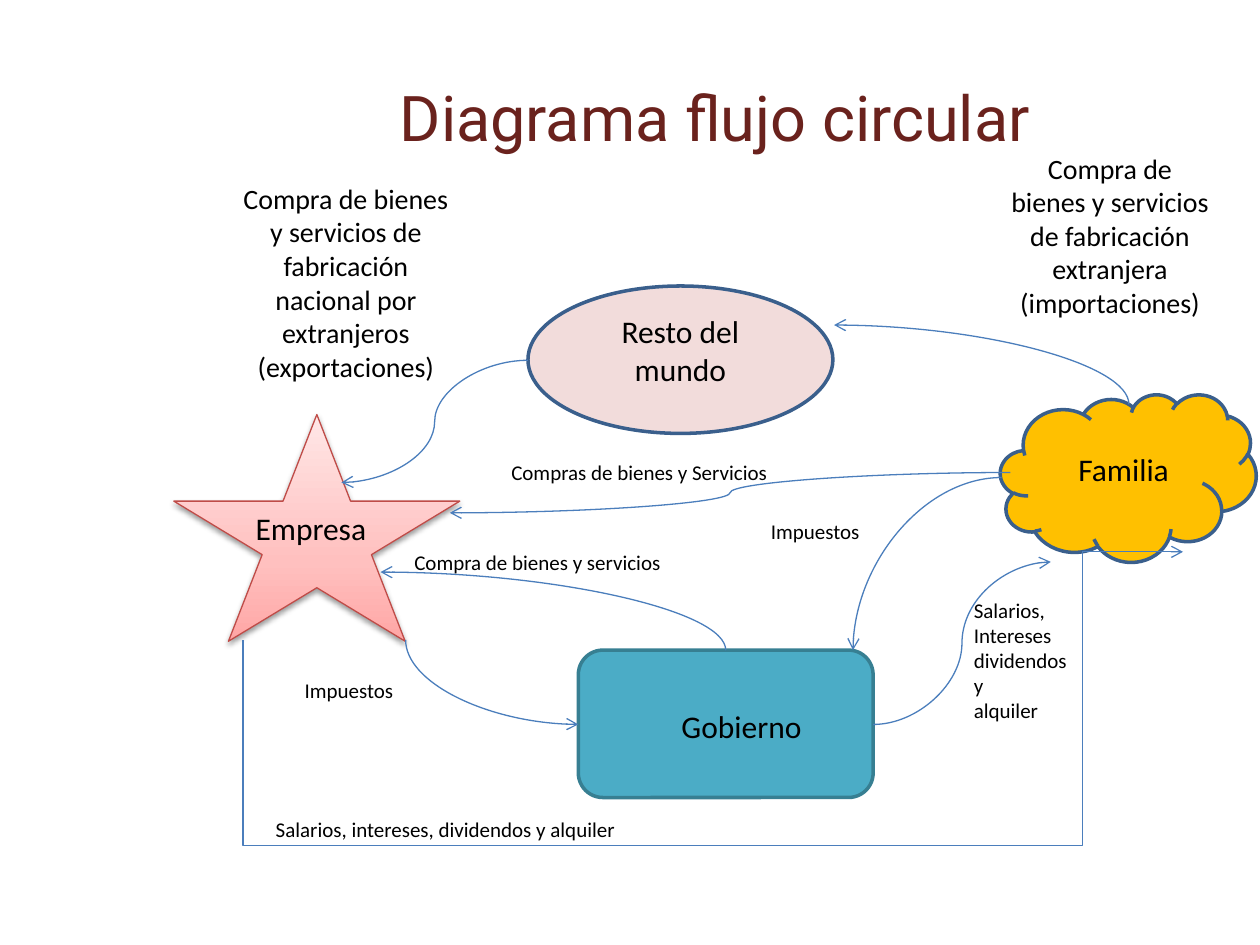
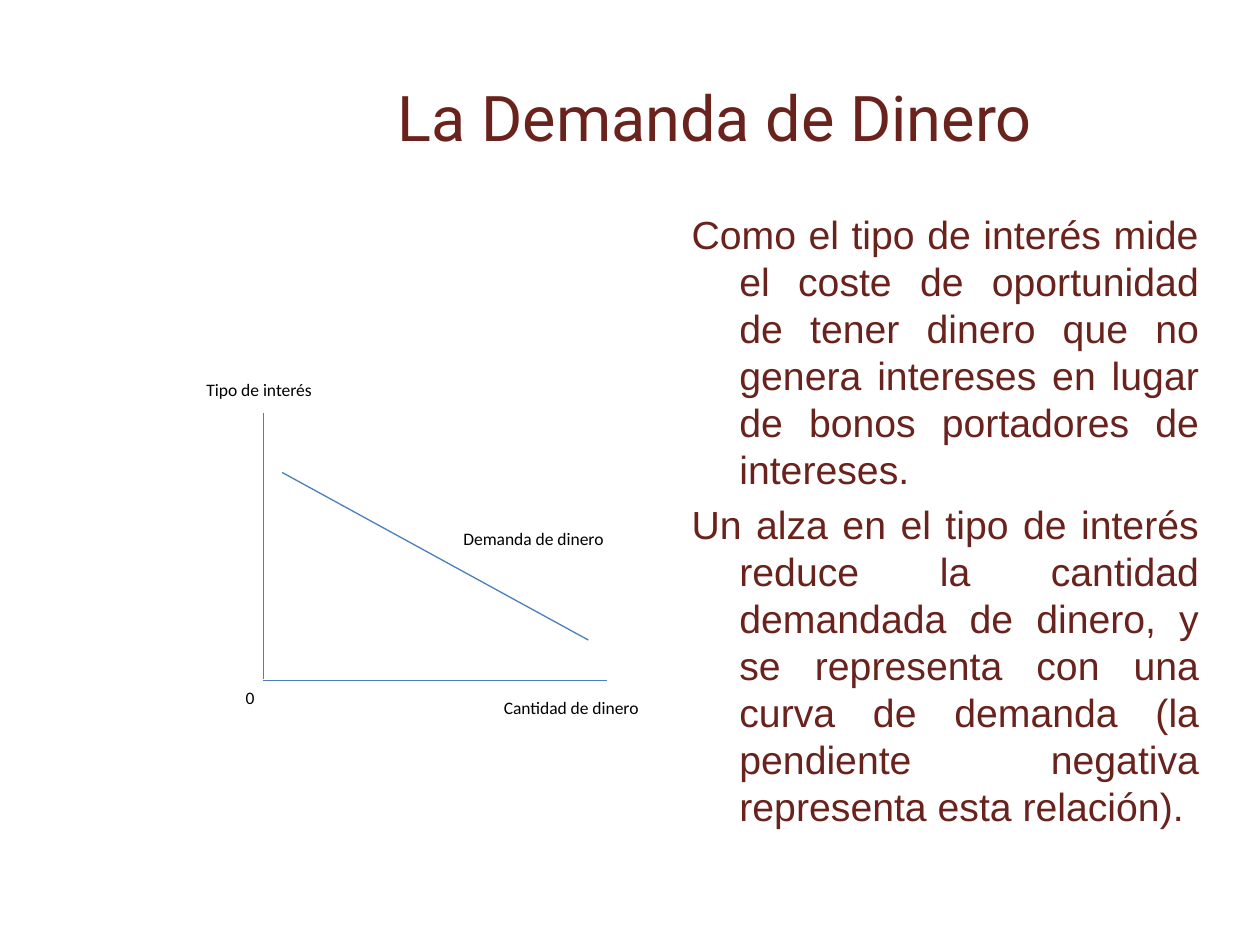
from copy import deepcopy
from dataclasses import dataclass
from lxml import etree
from pptx import Presentation
from pptx import util as u
from pptx.dml.color import RGBColor
from pptx.enum import shapes, text
from pptx.oxml.ns import qn


@dataclass(frozen=True)
class Theme:
    title: str = "6A221D"
    ink: str = "000000"
    wire: str = "4B7EBC"
    edge: str = "3A5F8C"
    rose: str = "F2DCDB"
    gold: str = "FFC000"
    teal: str = "4BACC6"
    pine: str = "377F92"
    red: str = "BF4C48"
    head: float = 36
    body: float = 22.4
    node: float = 18
    note: float = 16
    flow: float = 12
    axis: float = 10
    thin: float = 0.75
    bold: float = 2


T = Theme()
KIND, LINK, MID = shapes.MSO_SHAPE, shapes.MSO_CONNECTOR, text.PP_ALIGN.CENTER
TITLE_BOX = (1.85, 0.3, 7.65, 1.25)
STAR_STOPS = [(0, "FFA6A5"), (0.35, "FFC0BF"), (1, "FFE7E7")]
STAR_SHADE = {"blurRad": u.Pt(3.1), "dist": u.Pt(1.6), "dir": 5400000, "rotWithShape": 0}

NODES = [
    (KIND.OVAL, (4.19, 2.27, 2.42, 1.17), T.rose, T.edge, T.bold),
    (KIND.STAR_5_POINT, (1.38, 3.29, 2.27, 1.8), STAR_STOPS, T.red, T.thin),
    (KIND.ROUNDED_RECTANGLE, (4.59, 5.16, 2.34, 1.17), T.teal, T.pine, T.bold),
    (KIND.CLOUD, (7.94, 3.13, 2.03, 1.33), T.gold, T.edge, T.bold),
]
FLOWS = [
    ("curvedConnector3", (4.19, 2.86, 2.71, 3.83), "tailEnd", []),
    ("curvedConnector2", (7.95, 3.79, 6.77, 5.16), "tailEnd", []),
    ("curvedConnector3", (8.02, 3.75, 3.57, 4.07), "tailEnd", []),
    ("curvedConnector2", (3.02, 4.54, 5.76, 5.16), "headEnd", []),
    ("curvedConnector2", (6.62, 2.58, 8.96, 3.21), "headEnd", []),
    ("curvedConnector2", (4.59, 5.75, 3.22, 5.08), "headEnd", []),
    ("curvedConnector3", (6.93, 5.75, 8.34, 4.46), "tailEnd", []),
    ("bentConnector4", (9.39, 4.38, 1.93, 5.08), "headEnd", [10750, 332900]),
]
NOTES = [
    (["Compra de bienes y servicios de fabricación nacional por extranjeros",
      "(exportaciones)"], (1.77, 1.39, 1.95, 1.72), T.note, MID),
    (["Compra de bienes y servicios de fabricación extranjera",
      "(importaciones)"], (7.91, 1.15, 1.8, 1.72), T.note, MID),
    (["Resto del mundo"], (4.66, 2.43, 1.48, 0.71), T.node, MID),
    (["Empresa"], (1.93, 3.99, 1.33, 0.4), T.node, None),
    (["Familia"], (8.46, 3.52, 1.17, 0.4), T.node, None),
    (["Gobierno"], (5.31, 5.56, 1.72, 0.4), T.node, None),
    (["Compras de bienes y Servicios"], (3.96, 3.6, 3.67, 0.3), T.flow, None),
    (["Salarios,", "Intereses", "dividendos y", "alquiler"],
     (7.63, 4.69, 1.02, 1.11), T.flow, None),
    (["Compra de bienes y servicios"], (3.19, 4.31, 2.73, 0.3), T.flow, None),
    (["Impuestos"], (6.02, 4.07, 1.25, 0.3), T.flow, None),
    (["Salarios, intereses, dividendos y alquiler"], (2.09, 6.43, 5.86, 0.3), T.flow, None),
    (["Impuestos"], (2.32, 5.33, 1.56, 0.3), T.flow, None),
]
BODY = [
    "Como el tipo de interés mide el coste de oportunidad de tener dinero que no genera "
    "intereses en lugar de bonos portadores de intereses.",
    "Un alza en el tipo de interés reduce la cantidad demandada de dinero, y se representa "
    "con una curva de demanda (la pendiente negativa representa esta relación).",
]
BODY_BOX = (5.39, 1.62, 4.23, 4.95)
AXES = [(2.09, 3.28, 2.09, 5.39), (2.09, 5.4, 4.82, 5.4), (2.24, 3.75, 4.67, 5.08)]
MARKS = [
    ("Tipo de interés", (1.54, 2.96, 1.05, 0.27), False),
    ("Demanda de dinero", (3.58, 4.14, 1.33, 0.44), True),
    ("Cantidad de dinero", (3.9, 5.48, 1.56, 0.27), True),
    ("0", (1.85, 5.4, 0.28, 0.27), False),
]


def inch(box):
    return [u.Inches(n) for n in box]


def rgb(code):
    return RGBColor.from_string(code)


def put(obj, vals):
    for key, val in vals.items():
        setattr(obj, key, val)


def node(root, tag, **vals):
    return etree.SubElement(root, qn(tag), {k: str(v) for k, v in vals.items()})


def style(par, size, face="Calibri", tint=T.ink):
    put(par.font, {"size": u.Pt(size), "name": face})
    par.font.color.rgb = rgb(tint)


def label(page, lines, box, size, align=None, wrap=True, face="Calibri", tint=T.ink):
    frame = page.shapes.add_textbox(*inch(box)).text_frame
    frame.word_wrap = wrap
    frame.text = "\n".join(lines)
    for par in frame.paragraphs:
        par.alignment = align
        style(par, size, face, tint)
    return frame


def stroke(line, tint, width):
    line.color.rgb = rgb(tint)
    line.width = u.Pt(width)


def wire(page, ends, kind=LINK.STRAIGHT):
    link = page.shapes.add_connector(kind, *inch(ends))
    stroke(link.line, T.wire, T.thin)
    node(link._element.spPr, "a:effectLst")
    return link


def flow(page, form, ends, tip, bends):
    link = wire(page, ends, LINK.CURVE if form.startswith("curved") else LINK.ELBOW)
    geom = link._element.spPr.find(qn("a:prstGeom"))
    geom.set("prst", form)
    for num, bend in enumerate(bends, 1):
        node(geom.find(qn("a:avLst")), "a:gd", name=f"adj{num}", fmla=f"val {bend}")
    node(link.line._get_or_add_ln(), "a:" + tip, type="arrow")


def blend(item, stops):
    item.fill.gradient()
    item.fill.gradient_angle = 90
    group = item._element.spPr.find(qn("a:gradFill")).find(qn("a:gsLst"))
    group.append(deepcopy(group[-1]))
    for stop, (pos, tint) in zip(item.fill.gradient_stops, stops):
        stop.position = pos
        stop.color.rgb = rgb(tint)
    glow = item._element.spPr.find(qn("a:effectLst"))
    dark = node(node(glow, "a:outerShdw", **STAR_SHADE), "a:srgbClr", val=T.ink)
    node(dark, "a:alpha", val=38000)


def block(page, kind, box, fill, edge, width):
    item = page.shapes.add_shape(kind, *inch(box))
    item.shadow.inherit = False
    stroke(item.line, edge, width)
    if isinstance(fill, list):
        blend(item, fill)
    else:
        item.fill.solid()
        item.fill.fore_color.rgb = rgb(fill)


def start(deck, name):
    page = deck.slides.add_slide(deck.slide_layouts[5])
    head = page.shapes.title
    put(head, dict(zip(("left", "top", "width", "height"), inch(TITLE_BOX))))
    head.text_frame.text = name
    put(head.text_frame, {"vertical_anchor": text.MSO_ANCHOR.MIDDLE, "word_wrap": True,
                          "auto_size": text.MSO_AUTO_SIZE.NONE})
    par = head.text_frame.paragraphs[0]
    par.alignment = MID
    style(par, T.head, "Roboto", T.title)
    return page


def circle(deck):
    page = start(deck, "Diagrama flujo circular")
    for item in NODES:
        block(page, *item)
    for item in FLOWS:
        flow(page, *item)
    for item in NOTES:
        label(page, *item)


def demand(deck):
    page = start(deck, "La Demanda de Dinero")
    frame = label(page, BODY, BODY_BOX, T.body, text.PP_ALIGN.JUSTIFY, True, "Arial", T.title)
    hang = u.Inches(0.38)
    for num, par in enumerate(frame.paragraphs):
        par.space_before = u.Pt(4.5 if num else 0)
        for key, val in {"marL": hang, "indent": -hang}.items():
            par._p.get_or_add_pPr().set(key, str(val))
    for ends in AXES:
        wire(page, ends)
    for name, box, wrap in MARKS:
        label(page, [name], box, T.axis, wrap=wrap)


def main():
    deck = Presentation()
    put(deck, {"slide_width": u.Inches(10), "slide_height": u.Inches(7.5)})
    circle(deck)
    demand(deck)
    deck.save("out.pptx")


if __name__ == "__main__":
    main()
